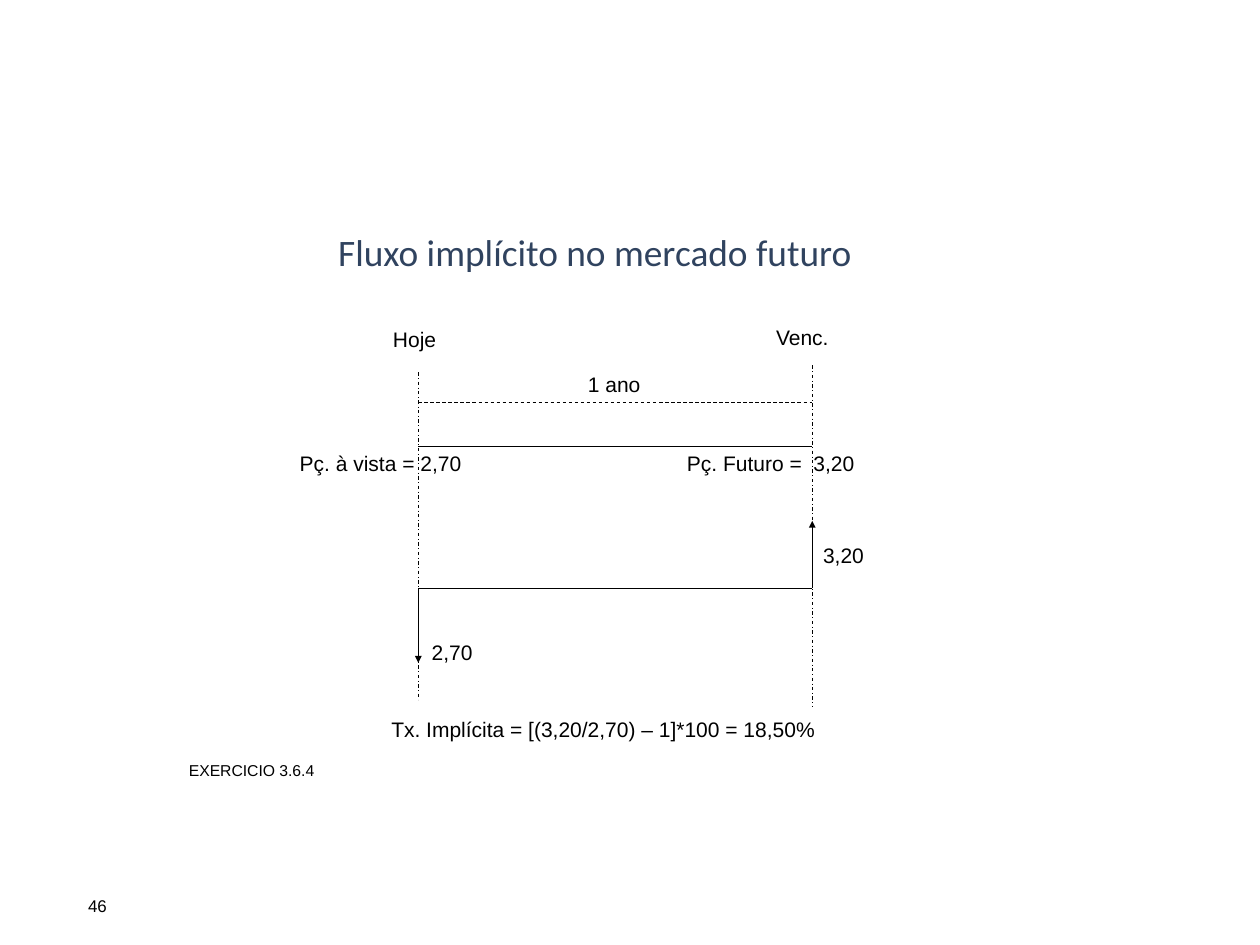
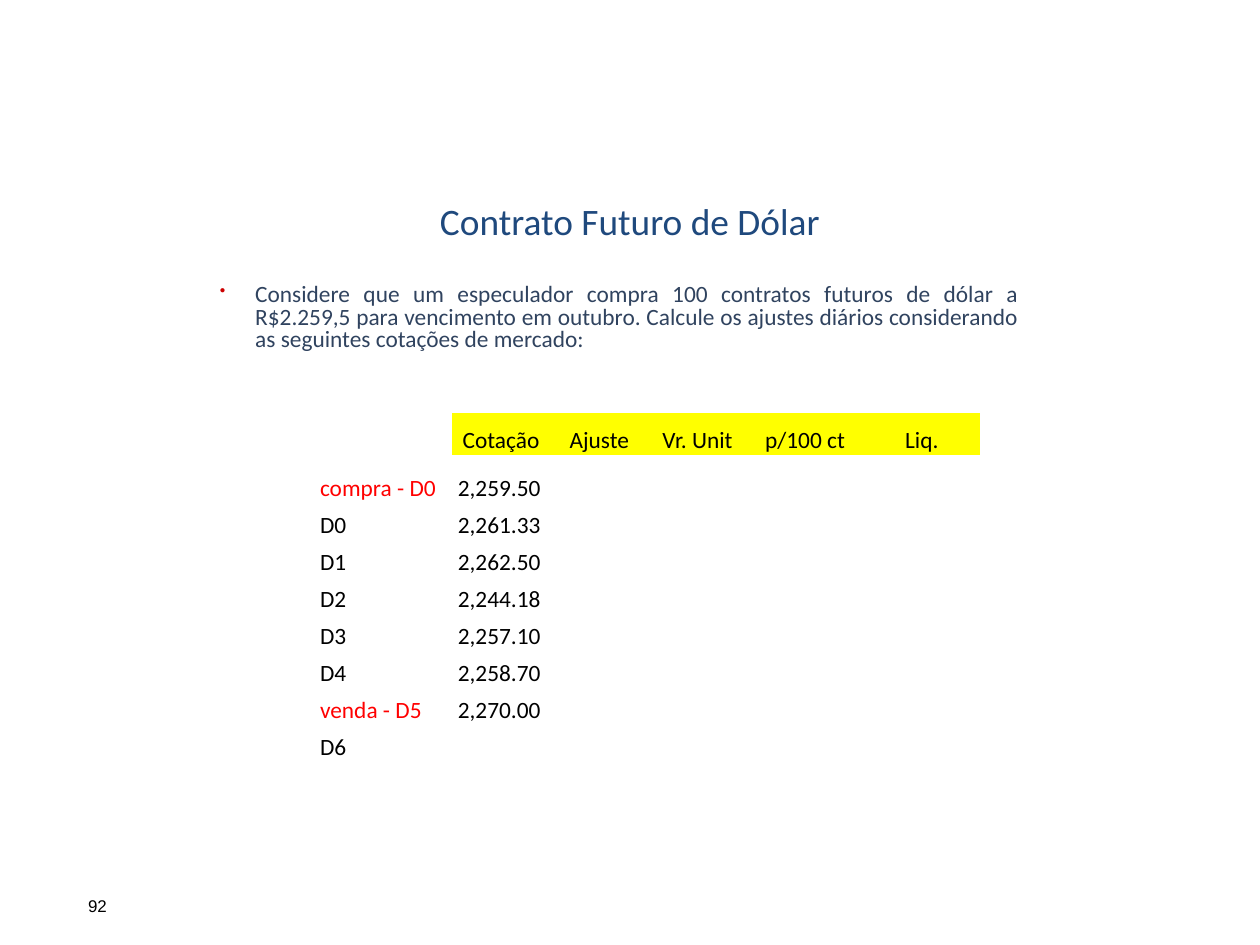
from lxml import etree
from pptx import Presentation
from pptx import util as u
from pptx.dml.color import RGBColor
from pptx.enum import dml, shapes, text
from pptx.oxml import ns

WIDTH, HEIGHT = 15, 11.25
COLS, ROWS = 15, 11.25
BLACK = RGBColor(0x00, 0x00, 0x00)
SLATE = RGBColor(0x30, 0x43, 0x5F)
BLUE = RGBColor(0x1F, 0x49, 0x7D)
RED = RGBColor(0xFF, 0x00, 0x00)
BULLET_RED = "CC0000"
YELLOW = RGBColor(0xFF, 0xFF, 0x00)
BODY, HEADING = "Arial", "Calibri"
NO_STYLE = "{2D5ABB26-0587-4C30-8999-92F81FD0307C}"
ALIGN = text.PP_ALIGN
DASH = dml.MSO_LINE


def add(parent, tag, **attrs):
    return etree.SubElement(parent, ns.qn(tag), attrs)


def write(tf, content, size=18, font=BODY, color=BLACK, align=ALIGN.LEFT):
    p = tf.paragraphs[0]
    p.alignment = align
    r = p.add_run()
    r.text = content
    r.font.size = u.Pt(size)
    r.font.name = font
    r.font.color.rgb = color
    return p


class Deck:
    def __init__(self):
        self.prs = Presentation()
        self.prs.slide_width = u.Inches(WIDTH)
        self.prs.slide_height = u.Inches(HEIGHT)
        self.s = None

    def x(self, cols):
        return round(self.prs.slide_width * cols / COLS)

    def y(self, rows):
        return round(self.prs.slide_height * rows / ROWS)

    def box(self, left, top, width, height):
        return self.x(left), self.y(top), self.x(width), self.y(height)

    def slide(self, title, number, at, color):
        self.s = self.prs.slides.add_slide(self.prs.slide_layouts[5])
        sp = self.s.shapes.title
        sp.left, sp.top, sp.width, sp.height = self.box(*at)
        tf = sp.text_frame
        tf.auto_size = text.MSO_AUTO_SIZE.NONE
        tf.vertical_anchor = text.MSO_ANCHOR.TOP
        write(tf, title, size=32, font=HEADING, color=color, align=ALIGN.CENTER)
        self.text(number, (0.95, 10.61, 0.83, 0.35), wrap=True, size=14.5)

    def text(self, content, at, wrap=False, **fmt):
        tf = self.s.shapes.add_textbox(*self.box(*at)).text_frame
        tf.word_wrap = wrap
        return write(tf, content, **fmt)

    def bullet(self, content, at):
        p = self.text(content, at, wrap=True, size=20, font=HEADING,
                      color=SLATE, align=ALIGN.JUSTIFY)
        pPr = p._p.get_or_add_pPr()
        pPr.set("marL", str(u.Inches(0.56)))
        pPr.set("indent", str(u.Inches(-0.42)))
        add(add(pPr, "a:buClr"), "a:srgbClr", val=BULLET_RED)
        add(pPr, "a:buSzPct", val="70000")
        add(pPr, "a:buChar", char="•")
        p.line_spacing = 0.8

    def line(self, x1, y1, x2, y2, dash=None, arrow=False):
        sp = self.s.shapes.add_connector(
            shapes.MSO_CONNECTOR.STRAIGHT,
            self.x(x1), self.y(y1), self.x(x2), self.y(y2))
        sp.line.color.rgb = BLACK
        sp.line.width = u.Pt(0.75)
        if dash:
            sp.line.dash_style = dash
        if arrow:
            add(sp.line._get_or_add_ln(), "a:tailEnd", type="triangle")
        add(sp._element.spPr, "a:effectLst")

    def table(self, left, top, widths, heights, header, rows):
        at = self.box(left, top, sum(widths), sum(heights))
        tbl = self.s.shapes.add_table(len(heights), len(widths), *at).table
        tbl.first_row = tbl.horz_banding = False
        tbl._tbl.tblPr.find(ns.qn("a:tableStyleId")).text = NO_STYLE
        for col, width in zip(tbl.columns, widths):
            col.width = self.x(width)
        for row, height in zip(tbl.rows, heights):
            row.height = self.y(height)
        for cell in tbl.iter_cells():
            cell.fill.background()
        for c, label in enumerate(header, 1):
            cell = tbl.cell(0, c)
            cell.fill.solid()
            cell.fill.fore_color.rgb = YELLOW
            self.cell(cell, label, align=ALIGN.CENTER)
        for i, (day, quote) in enumerate(rows, 1):
            self.cell(tbl.cell(i, 0), day, color=RED if " - " in day else BLACK)
            if quote:
                self.cell(tbl.cell(i, 1), quote, left=0.07)

    def cell(self, cell, content, left=0.01, **fmt):
        cell.vertical_anchor = text.MSO_ANCHOR.BOTTOM
        cell.margin_left = u.Inches(left)
        cell.margin_right = cell.margin_top = u.Inches(0.01)
        cell.margin_bottom = 0
        write(cell.text_frame, content, size=20, font=HEADING, **fmt)


def implied_flow(deck):
    deck.slide("Fluxo implícito no mercado futuro", "46",
               (2.51, 2.68, 9.15, 0.59), SLATE)
    today, maturity, base = 4.98, 9.67, 7
    for y, dash in ((4.79, DASH.DASH), (5.32, None), (base, None)):
        deck.line(today, y, maturity, y, dash)
    for x, tip in ((maturity, 6.2), (today, 7.89)):
        deck.line(x, base, x, tip, arrow=True)
    for x, top, bottom in ((today, 4.43, 8.33), (maturity, 4.35, 8.42)):
        deck.line(x, top, x, bottom, DASH.DASH_DOT)
    for label, left, top, width in (
        ("Hoje", 4.58, 3.84, 0.72),
        ("Venc.", 9.14, 3.81, 0.83),
        ("1 ano", 6.9, 4.37, 0.83),
        ("Pç. à vista = 2,70", 3.47, 5.32, 2.14),
        ("Pç. Futuro =  3,20", 8.08, 5.32, 2.21),
        ("2,70", 5.04, 7.56, 0.69),
        ("3,20", 9.7, 6.41, 0.69),
    ):
        deck.text(label, (left, top, width, 0.4))
    deck.text("Tx. Implícita = [(3,20/2,70) – 1]*100 = 18,50%",
              (4.56, 8.48, 6.14, 0.4), wrap=True)
    deck.text("EXERCICIO 3.6.4", (2.15, 9.01, 1.72, 0.33), size=13.5)


def dollar_future(deck):
    deck.slide("Contrato Futuro de Dólar", "92", (4.8, 2.31, 5.4, 0.78), BLUE)
    deck.bullet("Considere que um especulador compra 100 contratos futuros de "
                "dólar a R$2.259,5 para vencimento em outubro. Calcule os "
                "ajustes diários considerando as seguintes cotações de mercado:",
                (2.38, 3.34, 9.84, 0.92))
    deck.table(
        3.8, 4.92,
        [1.58] + [1.17] * 3 + [1.39] * 2,
        [0.5, 0.57] + [0.44] * 7,
        ["Cotação", "Ajuste", "Vr. Unit", "p/100 ct", "Liq."],
        [("compra - D0", "2,259.50"), ("D0", "2,261.33"), ("D1", "2,262.50"),
         ("D2", "2,244.18"), ("D3", "2,257.10"), ("D4", "2,258.70"),
         ("venda - D5", "2,270.00"), ("D6", None)])


def main():
    deck = Deck()
    implied_flow(deck)
    dollar_future(deck)
    deck.prs.save("out.pptx")


if __name__ == "__main__":
    main()
